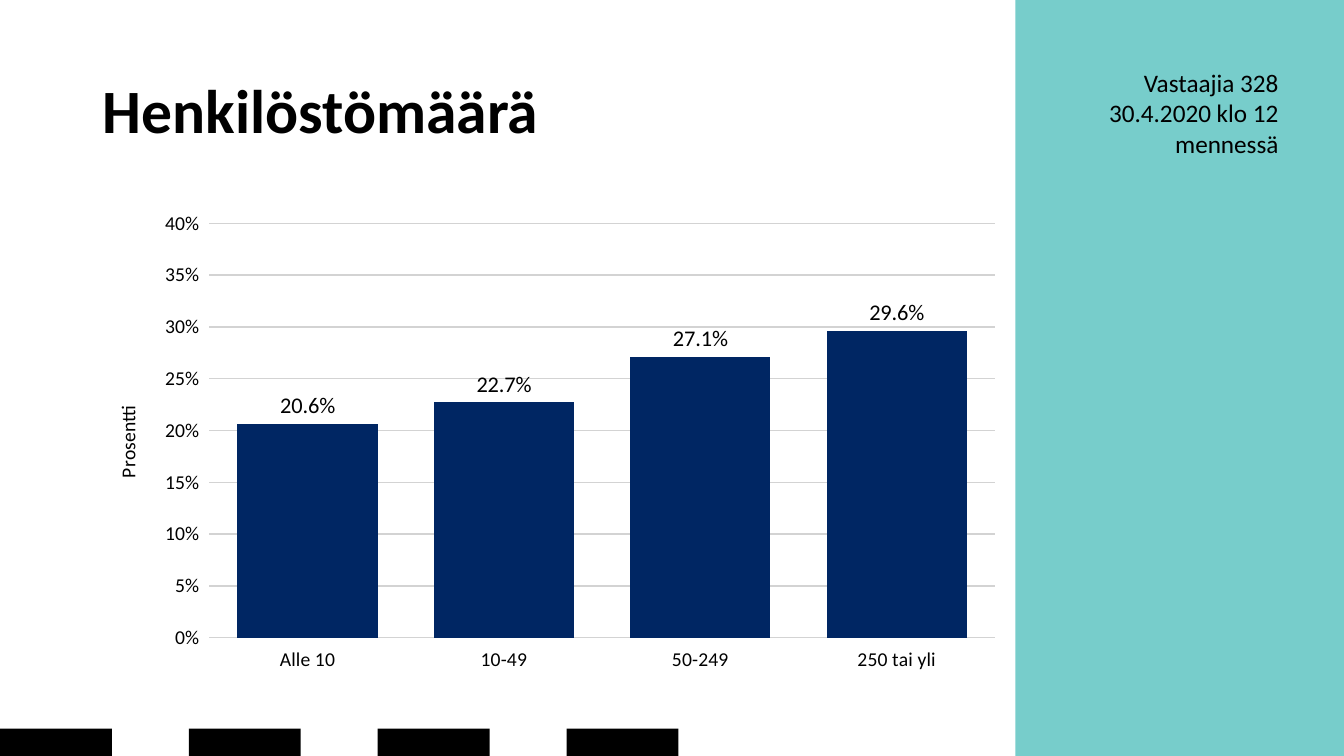
from pptx import Presentation
from pptx.chart.data import CategoryChartData
from pptx.dml.color import RGBColor
from pptx.enum.chart import XL_CHART_TYPE, XL_LABEL_POSITION, XL_TICK_MARK
from pptx.enum.shapes import MSO_SHAPE
from pptx.enum.text import MSO_ANCHOR, PP_ALIGN
from pptx.util import Inches, Pt

TITLE = "Henkilöstömäärä"
NOTE = ["Vastaajia 328", "30.4.2020 klo 12 mennessä"]
AXIS = "Prosentti"
SHARES = {"Alle 10": 0.206, "10-49": 0.227, "50-249": 0.271, "250 tai yli": 0.296}
FONT = "Calibri"
COLORS = {"panel": "77CDCB", "black": "000000", "bar": "002663", "grid": "D3D3D3"}
BLOCKS, STEP = 4, 1.873

prs = Presentation()
prs.slide_width, prs.slide_height = Inches(13.33), Inches(7.5)
slide = prs.slides.add_slide(prs.slide_layouts[6])


def color(name):
    return RGBColor.from_string(COLORS[name])


def style(font, size, bold=False):
    font.name, font.size, font.bold = FONT, Pt(size), bold
    font.color.rgb = color("black")


def add_rect(box, fill):
    rect = slide.shapes.add_shape(MSO_SHAPE.RECTANGLE, *map(Inches, box))
    rect.shadow.inherit = False
    rect.fill.solid()
    rect.fill.fore_color.rgb = color(fill)
    rect.line.fill.background()


def add_text(box, lines, size, bold=False, align=PP_ALIGN.LEFT,
             anchor=MSO_ANCHOR.TOP, spacing=1.0):
    frame = slide.shapes.add_textbox(*map(Inches, box)).text_frame
    frame.word_wrap = True
    frame.vertical_anchor = anchor
    frame.text = "\n".join(lines)
    for para in frame.paragraphs:
        para.alignment, para.line_spacing = align, spacing
        for run in para.runs:
            style(run.font, size, bold)


def add_bars(box):
    data = CategoryChartData()
    data.categories = list(SHARES)
    data.add_series("Series 1", list(SHARES.values()))
    chart = slide.shapes.add_chart(
        XL_CHART_TYPE.COLUMN_CLUSTERED, *map(Inches, box), data).chart
    chart.has_legend = chart.has_title = False
    style(chart.font, 18)

    for axis in (chart.category_axis, chart.value_axis):
        style(axis.tick_labels.font, 14)
        axis.major_tick_mark = axis.minor_tick_mark = XL_TICK_MARK.CROSS
        axis.format.line.fill.background()
    axis = chart.value_axis
    axis.minimum_scale, axis.maximum_scale, axis.major_unit = 0, 0.4, 0.05
    axis.tick_labels.number_format = "0%"
    axis.tick_labels.number_format_is_linked = False
    axis.major_gridlines.format.line.color.rgb = color("grid")
    axis.major_gridlines.format.line.width = Pt(1)
    axis.axis_title.text_frame.text = AXIS
    style(axis.axis_title.text_frame.paragraphs[0].runs[0].font, 14)

    plot = chart.plots[0]
    plot.gap_width, plot.vary_by_categories = 40, False
    bars = plot.series[0].format
    bars.fill.solid()
    bars.fill.fore_color.rgb = color("bar")
    plot.has_data_labels = True
    labels = plot.data_labels
    labels.show_value = True
    labels.number_format, labels.number_format_is_linked = "0.0%", False
    labels.position = XL_LABEL_POSITION.OUTSIDE_END
    style(labels.font, 16)


add_rect((10.07, 0, 3.26, 7.5), "panel")
for i in range(BLOCKS):
    add_rect((i * STEP, 7.23, 1.11, 0.27), "black")
add_text((0.92, 0.4, 11.5, 1.45), [TITLE], 44, bold=True,
         anchor=MSO_ANCHOR.MIDDLE, spacing=0.9)
add_text((10.71, 0.62, 2.07, 1.01), NOTE, 18, align=PP_ALIGN.RIGHT)
add_bars((0.92, 2, 9.13, 4.76))

prs.save("out.pptx")
